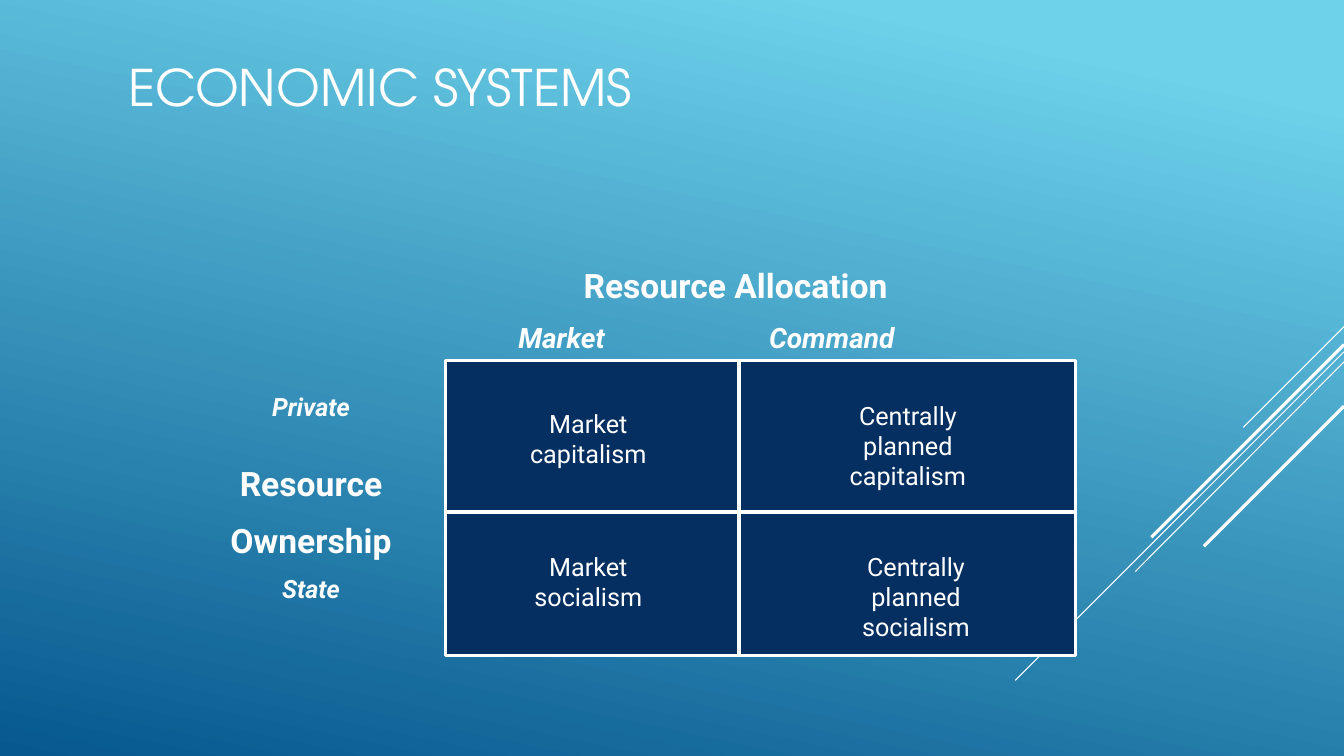
"""Build the economic systems slide: a two-by-two matrix with axis labels."""
from lxml import etree
from pptx import Presentation
from pptx.dml.color import RGBColor
from pptx.enum.shapes import MSO_CONNECTOR, MSO_SHAPE
from pptx.enum.text import MSO_ANCHOR, PP_ALIGN
from pptx.oxml.ns import qn
from pptx.util import Inches, Pt

STRAIGHT = MSO_CONNECTOR.STRAIGHT
RECTANGLE = MSO_SHAPE.RECTANGLE
MIDDLE = MSO_ANCHOR.MIDDLE
LEFT, CENTER = PP_ALIGN.LEFT, PP_ALIGN.CENTER
COLORS = {
    name: RGBColor.from_string(value)
    for name, value in {
        "white": "FFFFFF", "navy": "052F61", "sky": "6ED2EB", "ocean": "06588E",
    }.items()
}
BODY_FONT, TITLE_FONT = "Roboto", "TeX Gyre Adventor"


def add_line(x1, y1, x2, y2, width):
    """Draw a white line without a shadow."""
    line = slide.shapes.add_connector(
        STRAIGHT, Inches(x1), Inches(y1), Inches(x2), Inches(y2))
    line.line.color.rgb = COLORS["white"]
    line.line.width = Pt(width)
    etree.SubElement(line._element.spPr, qn("a:effectLst"))


def add_label(left, top, width, height, lines):
    """Add centred lines given as text, size, bold, italic and space before."""
    box = slide.shapes.add_textbox(
        Inches(left), Inches(top), Inches(width), Inches(height))
    frame = box.text_frame
    frame.word_wrap = True
    frame.text = "\n".join(line[0] for line in lines)
    for paragraph, (_, size, bold, italic, space) in zip(frame.paragraphs, lines):
        paragraph.alignment = CENTER
        paragraph.space_before = Pt(space)
        font = paragraph.runs[0].font
        font.name, font.size = BODY_FONT, Pt(size)
        font.bold, font.italic = bold, italic
        font.color.rgb = COLORS["white"]


presentation = Presentation()
presentation.slide_width, presentation.slide_height = Inches(13.33), Inches(7.5)
slide = presentation.slides.add_slide(presentation.slide_layouts[5])

background = slide.background.fill
background.gradient()
background.gradient_angle = 258
for stop, color, position in zip(background.gradient_stops, ("sky", "ocean"), (0.1, 1)):
    stop.color.rgb = COLORS[color]
    stop.position = position

for top, end_x, end_y, width in [
    (3.24, 12.33, 4.24, 0.75),
    (3.49, 10.07, 6.75, 0.75),
    (3.59, 11.26, 5.67, 0.75),
    (3.42, 11.42, 5.33, 2.25),
    (4.03, 11.94, 5.42, 2.25),
]:
    add_line(13.33, top, end_x, end_y, width)

title = slide.shapes.title
title.left, title.top = Inches(1.17), Inches(0.03)
title.width, title.height = Inches(9.33), Inches(1.65)
title.text_frame.text = "ECONOMIC SYSTEMS"
title.text_frame.vertical_anchor = MIDDLE
title_paragraph = title.text_frame.paragraphs[0]
title_paragraph.alignment = LEFT
title_font = title_paragraph.runs[0].font
title_font.name, title_font.size = TITLE_FONT, Pt(36)
title_font.color.rgb = COLORS["white"]

matrix_left, matrix_top, matrix_width, matrix_height = 4.42, 3.58, 6.25, 2.92
matrix = slide.shapes.add_shape(
    RECTANGLE, Inches(matrix_left), Inches(matrix_top),
    Inches(matrix_width), Inches(matrix_height))
matrix.shadow.inherit = False
matrix.fill.solid()
matrix.fill.fore_color.rgb = COLORS["navy"]
matrix.line.color.rgb = COLORS["white"]
matrix.line.width = Pt(2.25)
add_line(7.33, matrix_top, 7.33, matrix_top + matrix_height, 2.25)
add_line(matrix_left, 5.08, matrix_left + matrix_width, 5.08, 2.25)

add_label(4.42, 2.58, 5.75, 0.5, [("Resource Allocation", 24, True, False, 0)])
for heading, left in [("Market", 4.57), ("Command", 7.25)]:
    add_label(left, 3.13, 2, 0.43, [(heading, 20, True, True, 0)])

add_label(2, 3.83, 2.17, 2.75, [
    ("Private", 18, True, True, 0),
    ("Resource", 24, True, False, 30),
    ("Ownership", 24, True, False, 12),
    ("State", 18, True, True, 9),
])

for left, top, width, height, system in [
    (5, 4, 1.67, 0.7, "Market capitalism"),
    (5, 5.42, 1.67, 0.7, "Market socialism"),
    (8.17, 3.92, 1.67, 1, "Centrally planned capitalism"),
    (8.17, 5.42, 1.83, 1, "Centrally planned socialism"),
]:
    add_label(left, top, width, height, [(system, 18, False, False, 0)])

presentation.save("out.pptx")
